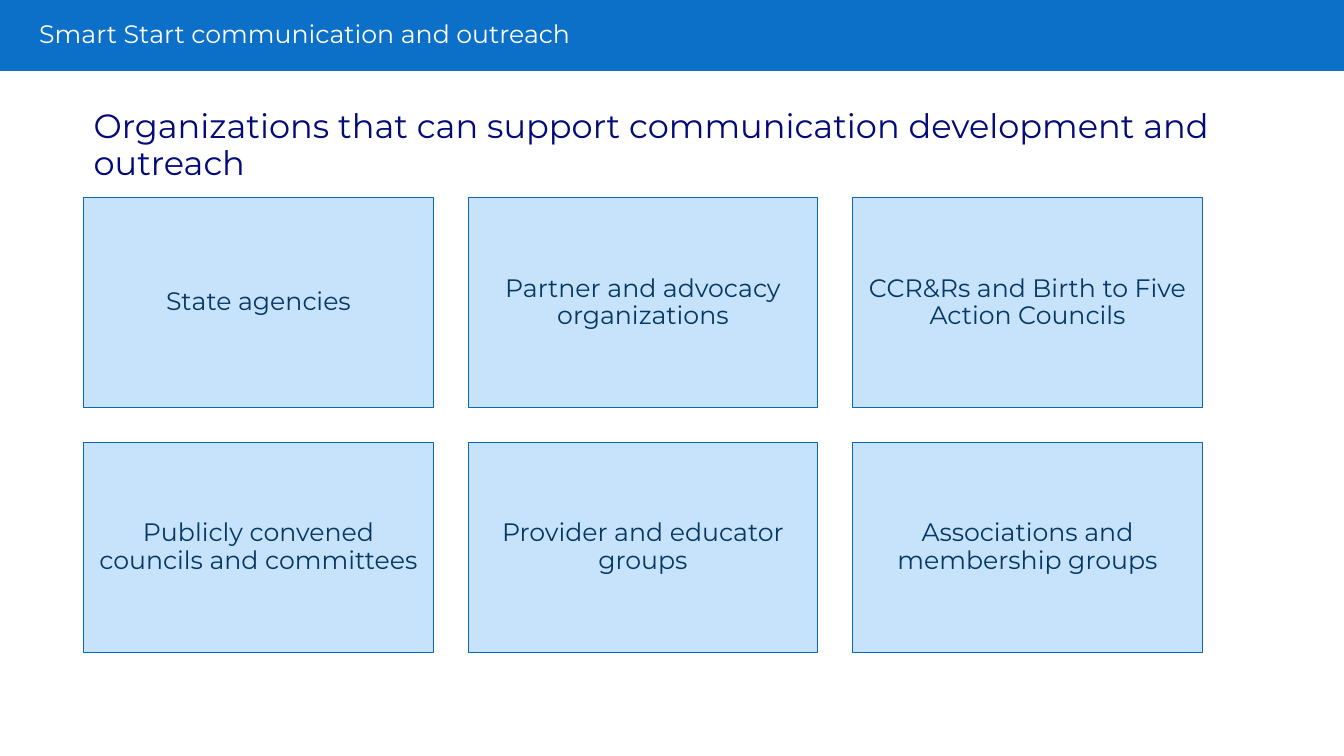
from dataclasses import dataclass

from pptx import Presentation
from pptx.dml.color import RGBColor
from pptx.enum.shapes import MSO_SHAPE
from pptx.enum.text import MSO_ANCHOR, PP_ALIGN
from pptx.shapes.autoshape import Shape
from pptx.slide import Slide
from pptx.util import Cm, Pt

COLORS = {
    "banner": "0C70C8",
    "title": "FFFFFF",
    "heading": "020A78",
    "card": "C7E3FC",
    "edge": "0B66B6",
    "label": "063864",
}
FONT = "Montserrat"
GROUPS = [
    "State agencies",
    "Partner and advocacy organizations",
    "CCR&Rs and Birth to Five Action Councils",
    "Publicly convened councils and committees",
    "Provider and educator groups",
    "Associations and membership groups",
]
COLUMNS = 3
CARD_LEFT, CARD_TOP = 2.11, 4.98
CARD_WIDTH, CARD_HEIGHT = 8.81, 5.29
GAP = 0.88


@dataclass
class Box:
    """A place on the slide, in centimetres."""
    left: float
    top: float
    width: float
    height: float

    def place(self) -> tuple[Cm, Cm, Cm, Cm]:
        return Cm(self.left), Cm(self.top), Cm(self.width), Cm(self.height)


def color(name: str) -> RGBColor:
    return RGBColor.from_string(COLORS[name])


def write(shape: Shape, text: str, *, size: float, ink: str,
          align: PP_ALIGN = PP_ALIGN.LEFT,
          anchor: MSO_ANCHOR = MSO_ANCHOR.TOP,
          inset: tuple[float, float] = (0.25, 0.13)) -> None:
    """Put one formatted paragraph in a shape; inset is side, then top."""
    frame = shape.text_frame
    frame.word_wrap = True
    frame.vertical_anchor = anchor
    frame.margin_left = frame.margin_right = Cm(inset[0])
    frame.margin_top = frame.margin_bottom = Cm(inset[1])
    para = frame.paragraphs[0]
    para.alignment = align
    para.line_spacing = 0.9
    run = para.add_run()
    run.text = text
    run.font.name = FONT
    run.font.size = Pt(size)
    run.font.color.rgb = color(ink)


def panel(slide: Slide, box: Box, fill: str, edge: str | None = None) -> Shape:
    shape = slide.shapes.add_shape(MSO_SHAPE.RECTANGLE, *box.place())
    shape.shadow.inherit = False
    shape.fill.solid()
    shape.fill.fore_color.rgb = color(fill)
    if edge:
        shape.line.color.rgb = color(edge)
        shape.line.width = Pt(1)
    else:
        shape.line.fill.background()
    return shape


def main() -> None:
    deck = Presentation()
    deck.slide_width, deck.slide_height = Cm(33.87), Cm(19.05)
    slide = deck.slides.add_slide(deck.slide_layouts[6])

    panel(slide, Box(0, 0, 33.87, 1.79), "banner")
    title = slide.shapes.add_textbox(*Box(0.74, 0.41, 19.18, 0.97).place())
    write(title, "Smart Start communication and outreach",
          size=18, ink="title", anchor=MSO_ANCHOR.MIDDLE)
    heading = slide.shapes.add_textbox(*Box(2.11, 2.64, 29.16, 1.3).place())
    write(heading,
          "Organizations that can support communication development and outreach",
          size=24, ink="heading")

    for index, group in enumerate(GROUPS):
        row, col = divmod(index, COLUMNS)
        box = Box(CARD_LEFT + col * (CARD_WIDTH + GAP),
                  CARD_TOP + row * (CARD_HEIGHT + GAP),
                  CARD_WIDTH, CARD_HEIGHT)
        write(panel(slide, box, "card", "edge"), group, size=18, ink="label",
              align=PP_ALIGN.CENTER, anchor=MSO_ANCHOR.MIDDLE,
              inset=(0.19, 0.19))

    deck.save("out.pptx")


if __name__ == "__main__":
    main()
